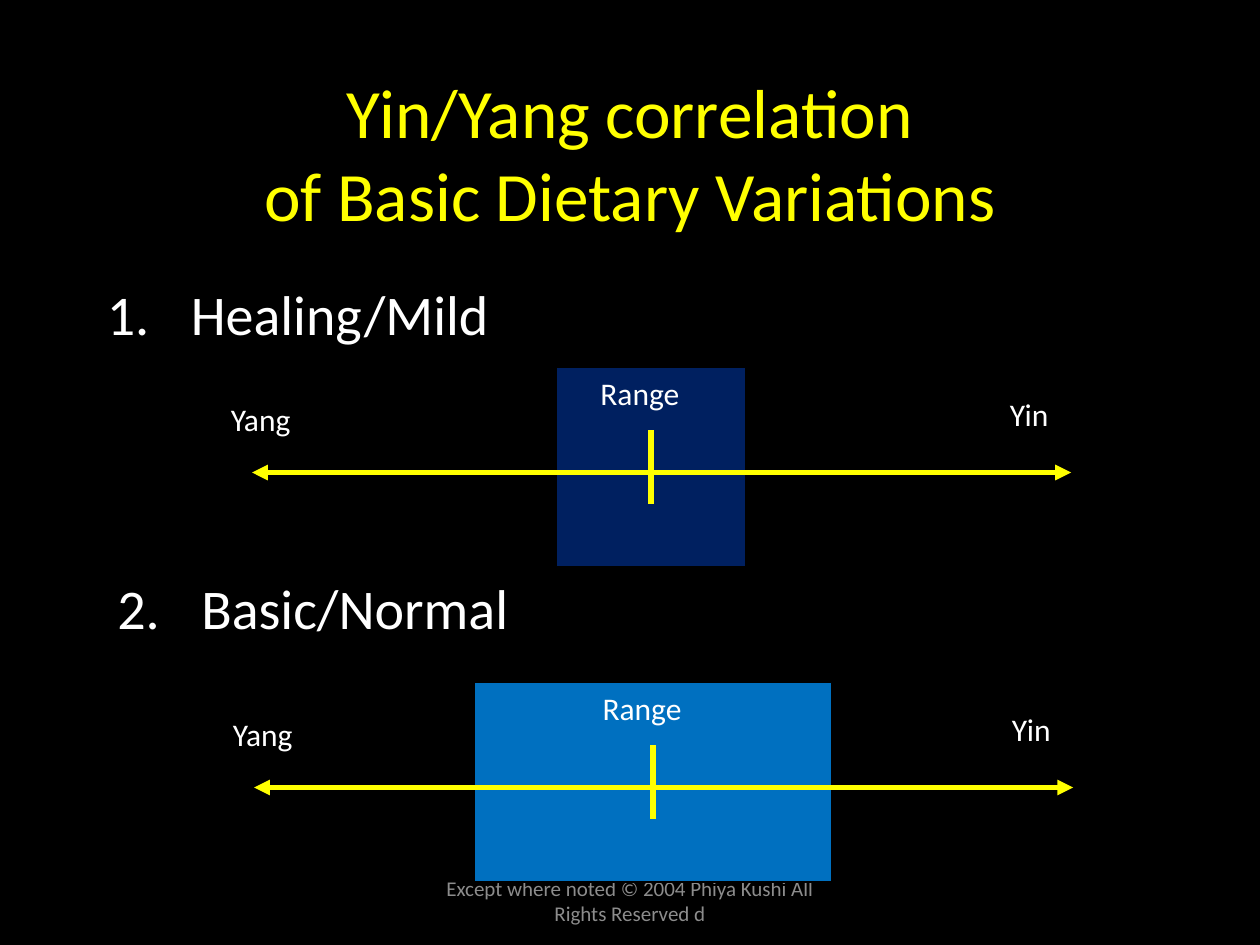
import pptx
import pptx.dml.color
import pptx.enum.shapes
import pptx.enum.text
import pptx.oxml
import pptx.oxml.ns
import pptx.util

Inches = pptx.util.Inches
Pt = pptx.util.Pt
ALIGN = pptx.enum.text.PP_ALIGN
ANCHOR = pptx.enum.text.MSO_ANCHOR
NS = pptx.oxml.ns.nsdecls("a")

# The slide is a grid of 120 columns by 90 rows with square cells
COLUMNS, ROWS = 120, 90
presentation = pptx.Presentation()
presentation.slide_width, presentation.slide_height = Inches(10), Inches(7.5)
CELL = presentation.slide_width / COLUMNS

slide = presentation.slides.add_slide(presentation.slide_layouts[6])
rgb = pptx.dml.color.RGBColor.from_string
slide.background.fill.solid()
slide.background.fill.fore_color.rgb = rgb("000000")


def write(shapes, lines, box, size, color, align=ALIGN.LEFT, anchor=ANCHOR.TOP, wrap=True):
    """Place lines of text in a box given in grid cells; return the paragraph."""
    frame = shapes.add_textbox(*[round(cells * CELL) for cells in box]).text_frame
    frame.word_wrap = wrap
    frame.vertical_anchor = anchor
    if not wrap:
        frame.auto_size = pptx.enum.text.MSO_AUTO_SIZE.SHAPE_TO_FIT_TEXT
    paragraph = frame.paragraphs[0]
    paragraph.alignment = align
    for index, line in enumerate(lines):
        if index:
            paragraph.add_line_break()
        run = paragraph.add_run()
        run.text = line
        run.font.name, run.font.size = "Calibri", Pt(size)
        run.font.color.rgb = rgb(color)
    return paragraph


def draw_line(shapes, start, end, arrows=False):
    """Draw a yellow line between two grid points."""
    ends = [round(cells * CELL) for cells in (*start, *end)]
    line = shapes.add_connector(pptx.enum.shapes.MSO_CONNECTOR.STRAIGHT, *ends)
    line.line.color.rgb = rgb("FFFF00")
    line.line.width = Pt(3)
    if arrows:
        for tip in ("headEnd", "tailEnd"):
            line.line._get_or_add_ln().append(
                pptx.oxml.parse_xml(f'<a:{tip} {NS} type="triangle"/>'))
    line._element.spPr.append(pptx.oxml.parse_xml(f"<a:effectLst {NS}/>"))


write(slide.shapes, ["Except where noted © 2004 Phiya Kushi All Rights Reserved d"],
      (41, 83.4, 38, 4.8), 12, "8C8C8C", ALIGN.CENTER, ANCHOR.MIDDLE)
write(slide.shapes, ["Yin/Yang correlation", "of Basic Dietary Variations"],
      (9, 6, 102, 17), 39.6, "FFFF00", ALIGN.CENTER, ANCHOR.MIDDLE)

# Diet, heading column and row, scale's left column, range's top row and width, range colour
diets = [
    ("Healing/Mild", 9, 26, 24, 35, 18, "002060"),
    ("Basic/Normal", 10, 54, 24.2, 65, 34, "0070C0"),
]
SCALE_WIDTH, RANGE_HEIGHT = 78, 19

for number, (diet, heading_left, heading_top, left, top, width, color) in enumerate(diets, 1):
    heading = write(slide.shapes, [diet], (heading_left, heading_top, 41, 8), 32, "FFFFFF")
    properties = heading._p.get_or_add_pPr()
    properties.set("marL", str(round(8 * CELL)))
    properties.set("indent", str(round(-8 * CELL)))
    properties.append(pptx.oxml.parse_xml(
        f'<a:spcBef {NS}><a:spcPct val="20000"/></a:spcBef>'))
    properties.append(pptx.oxml.parse_xml(
        f'<a:buAutoNum {NS} type="arabicPeriod" startAt="{number}"/>'))

    scale = slide.shapes.add_group_shape().shapes
    middle = left + 38
    range_box = (middle - width / 2, top, width, RANGE_HEIGHT)
    diet_range = scale.add_shape(pptx.enum.shapes.MSO_SHAPE.RECTANGLE,
                                 *[round(cells * CELL) for cells in range_box])
    diet_range.shadow.inherit = False
    diet_range.fill.solid()
    diet_range.fill.fore_color.rgb = rgb(color)
    diet_range.line.color.rgb = rgb("000000")
    diet_range.line.width = Pt(0.75)

    draw_line(scale, (left, top + 10), (left + SCALE_WIDTH, top + 10), arrows=True)
    draw_line(scale, (middle, top + 6), (middle, top + 13))

    for label, across, down, label_width in [
        ("Yang", -3.2, 2.5, 11), ("Yin", 71, 2, 8.4), ("Range", 32, 0, 12.6),
    ]:
        write(scale, [label], (left + across, top + down, label_width, 6),
              18, "FFFFFF", wrap=False)

presentation.save("out.pptx")
